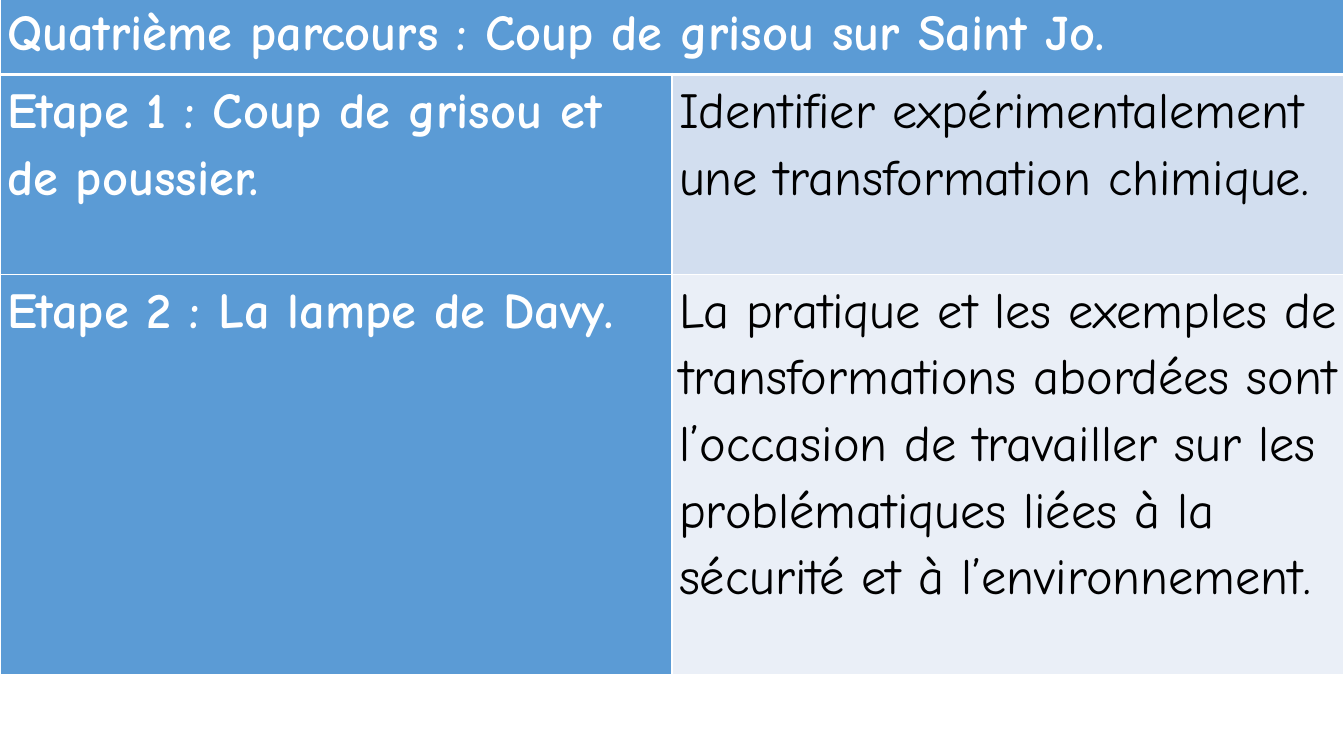
import pptx
import pptx.dml.color
import pptx.oxml
import pptx.oxml.ns
import pptx.util
from pptx.util import Inches

COLORS = {
    "white": "FFFFFF",
    "black": "000000",
    "blue": "5B9BD5",
    "band_dark": "D2DEEF",
    "band_light": "EAEFF7",
}
FONT = "Comic Neue"
TITLE = "Quatrième parcours : Coup de grisou sur Saint Jo."
STEPS = [
    ("Etape 1 : Coup de grisou et de poussier.",
     "Identifier expérimentalement une transformation chimique.",
     "band_dark"),
    ("Etape 2 : La lampe de Davy.",
     "La pratique et les exemples de transformations abordées sont "
     "l’occasion de travailler sur les problématiques liées à la sécurité "
     "et à l’environnement.",
     "band_light"),
]
ROW_HEIGHTS = (0.78, 1.98, 3.97)


def rgb(name):
    """Return the named colour."""
    return pptx.dml.color.RGBColor.from_string(COLORS[name])


def set_borders(cell, top, bottom):
    """Give a cell white borders, with top and bottom widths in points."""
    properties = cell._tc.get_or_add_tcPr()
    for side, width in (("L", 1), ("R", 1), ("T", top), ("B", bottom)):
        properties.append(pptx.oxml.parse_xml(
            f'<a:ln{side} {pptx.oxml.ns.nsdecls("a")} w="{pptx.util.Pt(width)}">'
            f'<a:solidFill><a:srgbClr val="{COLORS["white"]}"/></a:solidFill>'
            f'</a:ln{side}>'))


def style_cell(cell, text, fill, color, bold, top=1, bottom=1):
    """Write and format one cell."""
    set_borders(cell, top, bottom)
    cell.fill.solid()
    cell.fill.fore_color.rgb = rgb(fill)
    cell.margin_left = cell.margin_right = Inches(0.07)
    cell.margin_top = cell.margin_bottom = 0
    cell.text_frame.text = text
    para = cell.text_frame.paragraphs[0]
    para.line_spacing = 1.15
    font = para.runs[0].font
    font.name = FONT
    font.size = pptx.util.Pt(36)
    font.bold = bold
    font.color.rgb = rgb(color)


def add_steps_table(page, left, top, width):
    """Place the table of steps under its merged heading."""
    table = page.shapes.add_table(
        len(ROW_HEIGHTS), 2, left, top, width, Inches(sum(ROW_HEIGHTS))).table
    table.first_row = table.horz_banding = False
    for row, height in zip(table.rows, ROW_HEIGHTS):
        row.height = Inches(height)
    table.cell(0, 0).merge(table.cell(0, 1))
    style_cell(table.cell(0, 0), TITLE, "blue", "white", True, bottom=3)
    set_borders(table.cell(0, 1), 1, 3)
    for index, (step, goal, band) in enumerate(STEPS, start=1):
        edge = 3 if index == 1 else 1
        style_cell(table.cell(index, 0), step, "blue", "white", True, top=edge)
        style_cell(table.cell(index, 1), goal, band, "black", False, top=edge)


def main():
    """Build and save the deck."""
    deck = pptx.Presentation()
    deck.slide_width = Inches(13.33)
    deck.slide_height = Inches(7.5)
    page = deck.slides.add_slide(deck.slide_layouts[6])
    add_steps_table(page, 0, Inches(-0.04), deck.slide_width)
    deck.save("out.pptx")


if __name__ == "__main__":
    main()
